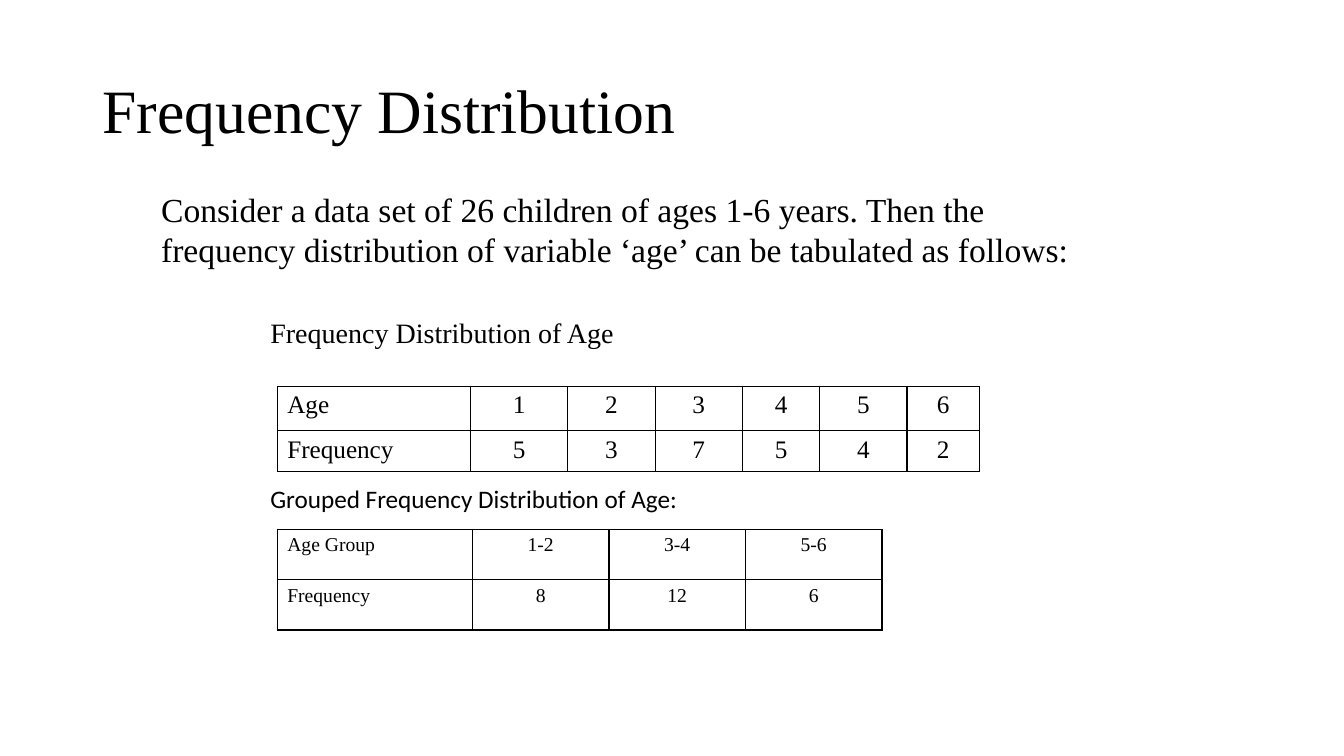
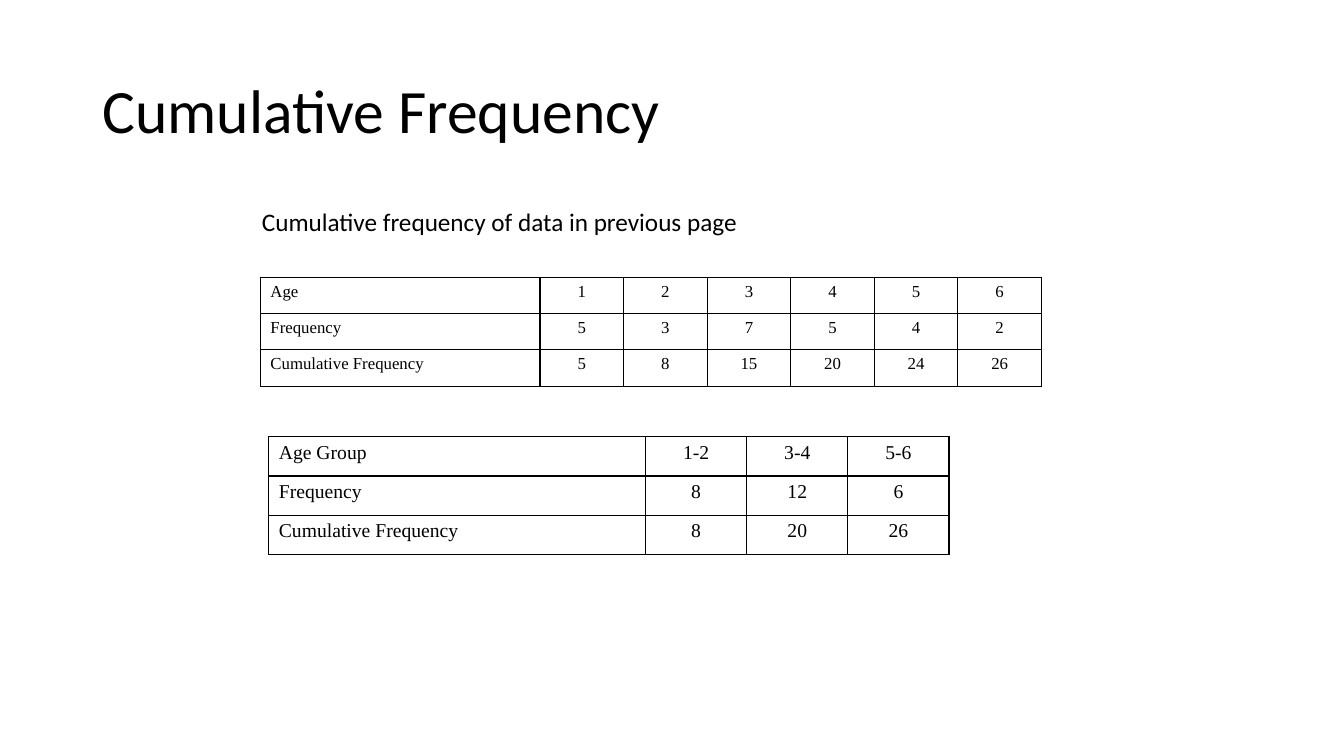
from lxml import etree
from pptx import Presentation
from pptx import util as u
from pptx.dml import color
from pptx.enum import text
from pptx.oxml import ns

SERIF, SANS = "Times New Roman", "Calibri"
COLORS = {"ink": "000000", "paper": "FFFFFF"}
COLUMNS, ROWS = 160, 90

AGES = ["1", "2", "3", "4", "5", "6"]
AGE_COUNTS = ["5", "3", "7", "5", "4", "2"]
AGE_TOTALS = ["5", "8", "15", "20", "24", "26"]
GROUPS = ["1-2", "3-4", "5-6"]
GROUP_COUNTS = ["8", "12", "6"]
GROUP_TOTALS = ["8", "20", "26"]


class Deck:
    """Shared style and current slide; lengths are columns and rows of a 160 x 90 grid."""

    def __init__(self):
        self.presentation = Presentation()
        self.presentation.slide_width = u.Inches(13.33)
        self.presentation.slide_height = u.Inches(7.5)
        self.slide = None

    def x(self, columns):
        return round(self.presentation.slide_width * columns / COLUMNS)

    def y(self, rows):
        return round(self.presentation.slide_height * rows / ROWS)

    def box(self, left, top, width, height):
        return self.x(left), self.y(top), self.x(width), self.y(height)

    def new_slide(self, title, font):
        blank = self.presentation.slide_layouts[6]
        self.slide = self.presentation.slides.add_slide(blank)
        frame = self.text(title, (11, 4.8, 138, 17.4), 44, font)
        frame.auto_size = text.MSO_AUTO_SIZE.NONE
        frame.vertical_anchor = text.MSO_ANCHOR.MIDDLE
        frame.paragraphs[0].line_spacing = 0.9

    def style(self, paragraph, size, font):
        for run in paragraph.runs:
            run.font.size = u.Pt(size)
            run.font.name = font
            run.font.color.rgb = color.RGBColor.from_string(COLORS["ink"])

    def text(self, words, place, size, font):
        frame = self.slide.shapes.add_textbox(*self.box(*place)).text_frame
        frame.word_wrap = True
        frame.auto_size = text.MSO_AUTO_SIZE.SHAPE_TO_FIT_TEXT
        frame.text = words
        self.style(frame.paragraphs[0], size, font)
        return frame

    def border(self, cell):
        properties = cell._tc.get_or_add_tcPr()
        for side in ("lnL", "lnR", "lnT", "lnB"):
            line = etree.SubElement(properties, ns.qn(f"a:{side}"), w=str(u.Pt(1)))
            fill = etree.SubElement(line, ns.qn("a:solidFill"))
            etree.SubElement(fill, ns.qn("a:srgbClr"), val=COLORS["ink"])

    def table(self, series, corner, widths, heights, size):
        """Draw a table from a dict of row label to values; the label column comes first."""
        place = self.box(*corner, sum(widths), sum(heights))
        grid = self.slide.shapes.add_table(len(heights), len(widths), *place).table
        grid.first_row = grid.horz_banding = False
        for column, width in zip(grid.columns, widths):
            column.width = self.x(width)
        for row, height, (label, values) in zip(grid.rows, heights, series.items()):
            row.height = self.y(height)
            for index, (cell, words) in enumerate(zip(row.cells, [label, *values])):
                cell.text = words
                paragraph = cell.text_frame.paragraphs[0]
                paragraph.alignment = text.PP_ALIGN.CENTER if index else text.PP_ALIGN.LEFT
                self.style(paragraph, size, SERIF)
                self.border(cell)
                cell.fill.solid()
                cell.fill.fore_color.rgb = color.RGBColor.from_string(COLORS["paper"])


def frequency_slide(deck):
    deck.new_slide("Frequency Distribution", SERIF)
    deck.text("Consider a data set of 26 children of ages 1-6 years. Then the frequency "
              "distribution of variable ‘age’ can be tabulated as follows:",
              (18, 21.84, 112, 10.9), 24, SERIF)
    deck.text("Frequency Distribution of Age", (31, 37, 50, 5.25), 20, SERIF)
    deck.table({"Age": AGES, "Frequency": AGE_COUNTS}, (33, 46),
               [23, 11.6, 10.4, 10.4, 9.2, 10.4, 8.6], [5.3, 4.5], 18)
    deck.text("Grouped Frequency Distribution of Age:", (31, 57, 99, 4.8), 18, SANS)
    deck.table({"Age Group": GROUPS, "Frequency": GROUP_COUNTS}, (33, 63),
               [23.25] + [16.25] * len(GROUPS), [6] * 2, 14)


def cumulative_slide(deck):
    deck.new_slide("Cumulative Frequency", SANS)
    deck.text("Cumulative frequency of data in previous page", (30, 24, 104, 4.8), 18, SANS)
    deck.table({"Age": AGES, "Frequency": AGE_COUNTS, "Cumulative Frequency": AGE_TOTALS},
               (31, 33), [33.3] + [9.95] * len(AGES), [4.33] * 3, 12)
    deck.table({"Age Group": GROUPS, "Frequency": GROUP_COUNTS,
                "Cumulative Frequency": GROUP_TOTALS},
               (32, 52), [44.85] + [12.05] * len(GROUPS), [4.67] * 3, 14)


def main():
    deck = Deck()
    frequency_slide(deck)
    cumulative_slide(deck)
    deck.presentation.save("out.pptx")


if __name__ == "__main__":
    main()
